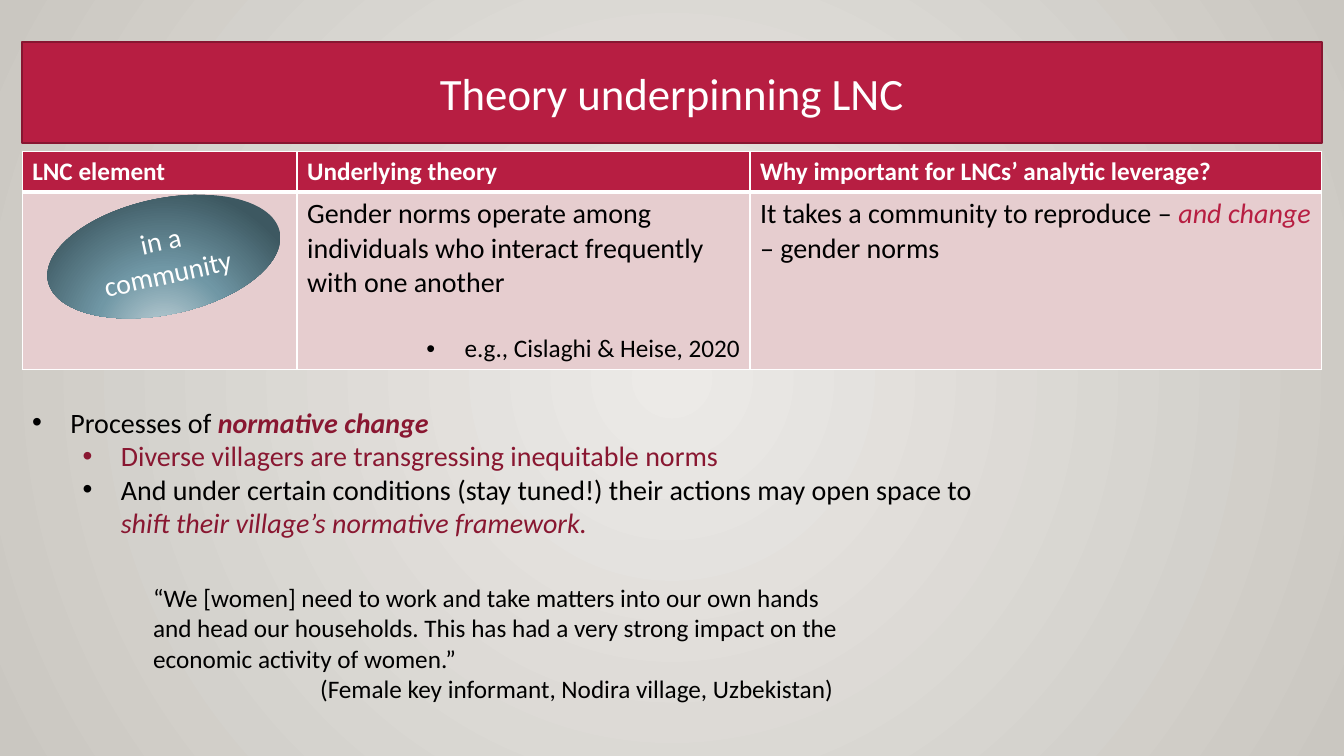
from dataclasses import dataclass, field

from pptx import Presentation
from pptx.dml.color import RGBColor
from pptx.enum.shapes import MSO_SHAPE
from pptx.enum.text import MSO_ANCHOR, PP_ALIGN
from pptx.oxml import parse_xml
from pptx.oxml.ns import nsdecls, qn
from pptx.util import Inches, Pt


@dataclass(frozen=True)
class Theme:
    font: str = "Calibri"
    title: int = 32
    body: int = 20
    small: int = 18
    crimson: str = "B71E42"
    wine: str = "891731"
    edge: str = "871631"
    blush: str = "E6CDCF"
    white: str = "FFFFFF"
    black: str = "000000"
    backdrop: tuple = ((0, "ECEAE7"), (100, "CAC7C1"))
    teal: tuple = ((0, "C3D3D9"), (46, "7097A5"), (100, "3D5861"))


@dataclass(frozen=True)
class Run:
    text: str
    color: str = ""
    bold: bool = False
    italic: bool = False


@dataclass(frozen=True)
class Para:
    runs: list
    size: int
    color: str = Theme.black
    bold: bool = False
    align: PP_ALIGN = PP_ALIGN.LEFT
    bullet: bool = False
    level: int = 0
    before: int = 0


@dataclass
class Builder:
    deck: object
    theme: Theme = field(default_factory=Theme)

    def __post_init__(self):
        self.slide = self.deck.slides.add_slide(self.deck.slide_layouts[6])

    def across(self, percent):
        return round(self.deck.slide_width * percent / 100)

    def down(self, percent):
        return round(self.deck.slide_height * percent / 100)

    def area(self, left, top, width, height):
        return self.across(left), self.down(top), self.across(width), self.down(height)

    def radial(self, fill, owner, stops, focus):
        fill.solid()
        solid = owner.find(".//" + qn("a:solidFill"))
        marks = "".join(
            f'<a:gs pos="{at * 1000}"><a:srgbClr val="{color}"/></a:gs>' for at, color in stops
        )
        edges = " ".join(f'{side}="{share * 1000}"' for side, share in zip("ltrb", focus))
        solid.getparent().replace(solid, parse_xml(
            f'<a:gradFill {nsdecls("a")} rotWithShape="1"><a:gsLst>{marks}</a:gsLst>'
            f'<a:path path="circle"><a:fillToRect {edges}/></a:path></a:gradFill>'
        ))

    def background(self, stops):
        self.radial(self.slide.background.fill, self.slide.element, stops, (50, 50, 50, 50))

    def compose(self, frame, paras):
        frame.word_wrap = True
        for index, para in enumerate(paras):
            line = frame.add_paragraph() if index else frame.paragraphs[0]
            line.alignment, line.level = para.align, para.level
            if para.before:
                line.space_before = Pt(para.before)
            if para.bullet:
                props = line._p.get_or_add_pPr()
                props.set("marL", str(Inches(0.38 + 0.5 * para.level)))
                props.set("indent", str(-Inches(0.38)))
                props.append(parse_xml(f'<a:buFont {nsdecls("a")} typeface="Arial"/>'))
                props.append(parse_xml(f'<a:buChar {nsdecls("a")} char="•"/>'))
            line.font.name, line.font.size = self.theme.font, Pt(para.size)
            line.font.bold = para.bold
            line.font.color.rgb = RGBColor.from_string(para.color)
            for part in para.runs:
                run = line.add_run()
                run.text = part.text
                if part.color:
                    run.font.color.rgb = RGBColor.from_string(part.color)
                if part.bold:
                    run.font.bold = True
                if part.italic:
                    run.font.italic = True

    def text(self, box, paras):
        self.compose(self.slide.shapes.add_textbox(*self.area(*box)).text_frame, paras)

    def shape(self, kind, box, para, fill="", line="", stops=(), focus=(), turn=0):
        shape = self.slide.shapes.add_shape(kind, *self.area(*box))
        shape.shadow.inherit = False
        shape.rotation = turn
        if stops:
            self.radial(shape.fill, shape.element, stops, focus)
        else:
            shape.fill.solid()
            shape.fill.fore_color.rgb = RGBColor.from_string(fill)
        if line:
            shape.line.color.rgb = RGBColor.from_string(line)
            shape.line.width = Pt(1.25)
        else:
            shape.line.fill.background()
        shape.text_frame.vertical_anchor = MSO_ANCHOR.MIDDLE
        self.compose(shape.text_frame, [para])

    def border(self, cell, widths):
        props = cell._tc.get_or_add_tcPr()
        for index, (side, width) in enumerate(zip("LRTB", widths)):
            props.insert(index, parse_xml(
                f'<a:ln{side} {nsdecls("a")} w="{Pt(width)}"><a:solidFill>'
                f'<a:srgbClr val="{self.theme.white}"/></a:solidFill></a:ln{side}>'
            ))

    def table(self, left, top, columns, rows, content):
        box = self.area(left, top, sum(columns), sum(rows))
        table = self.slide.shapes.add_table(len(rows), len(columns), *box).table
        for column, width in zip(table.columns, columns):
            column.width = self.across(width)
        looks = ((self.theme.crimson, (1, 1, 1, 3)), (self.theme.blush, (1, 1, 3, 1)))
        for row, height, entries, (fill, widths) in zip(table.rows, rows, content, looks):
            row.height = self.down(height)
            for cell, paras in zip(row.cells, entries):
                cell.fill.solid()
                cell.fill.fore_color.rgb = RGBColor.from_string(fill)
                self.border(cell, widths)
                self.compose(cell.text_frame, paras)


def main():
    deck = Presentation()
    deck.slide_width, deck.slide_height = Inches(13.33), Inches(7.5)
    page = Builder(deck)
    theme = page.theme
    margin, columns = 1.65, (20.45, 33.7, 42.55)

    page.background(theme.backdrop)

    headings = [
        [Para([Run(heading)], theme.small, theme.white, bold=True)]
        for heading in (
            "LNC element",
            "Underlying theory",
            "Why important for LNCs’ analytic leverage?",
        )
    ]
    theory = [
        Para([Run("Gender norms operate among individuals who interact frequently "
                  "with one another")], theme.body),
        Para([Run("e.g., Cislaghi & Heise, 2020")], theme.small,
             align=PP_ALIGN.RIGHT, bullet=True, before=24),
    ]
    leverage = [Para([
        Run("It takes a community to reproduce – "),
        Run("and change ", theme.crimson, italic=True),
        Run("– gender norms"),
    ], theme.body)]
    page.table(margin, 20, columns, (5.4, 23.5), [headings, [[], theory, leverage]])

    page.shape(
        MSO_SHAPE.OVAL, (3.38, 26.27, 17.63, 15.33),
        Para([Run("in a community")], theme.body, theme.white, align=PP_ALIGN.CENTER),
        stops=theme.teal, focus=(50, 130, 50, -30), turn=347.9,
    )
    page.shape(
        MSO_SHAPE.RECTANGLE, (margin, 5.6, sum(columns), 13.33),
        Para([Run("Theory underpinning LNC")], theme.title, theme.white,
             align=PP_ALIGN.CENTER),
        fill=theme.crimson, line=theme.edge,
    )

    page.text((margin, 52.93, 74.2, 19.2), [
        Para([Run("Processes of "),
              Run("normative change", theme.wine, bold=True, italic=True)],
             theme.body, bullet=True),
        Para([Run("Diverse villagers are transgressing inequitable norms")],
             theme.body, theme.wine, bullet=True, level=1),
        Para([Run("And under certain conditions (stay tuned!) their actions may open space to "),
              Run("shift their village’s normative framework.", theme.wine, italic=True)],
             theme.body, bullet=True, level=1),
    ])
    page.text((10.65, 76.4, 52.5, 17.47), [
        Para([Run("“We [women] need to work and take matters into our own hands and head "
                  "our households. This has had a very strong impact on the economic "
                  "activity of women.”")], theme.small),
        Para([Run("(Female key informant, Nodira village, Uzbekistan) ")],
             theme.small, align=PP_ALIGN.RIGHT),
    ])

    deck.save("out.pptx")


if __name__ == "__main__":
    main()
